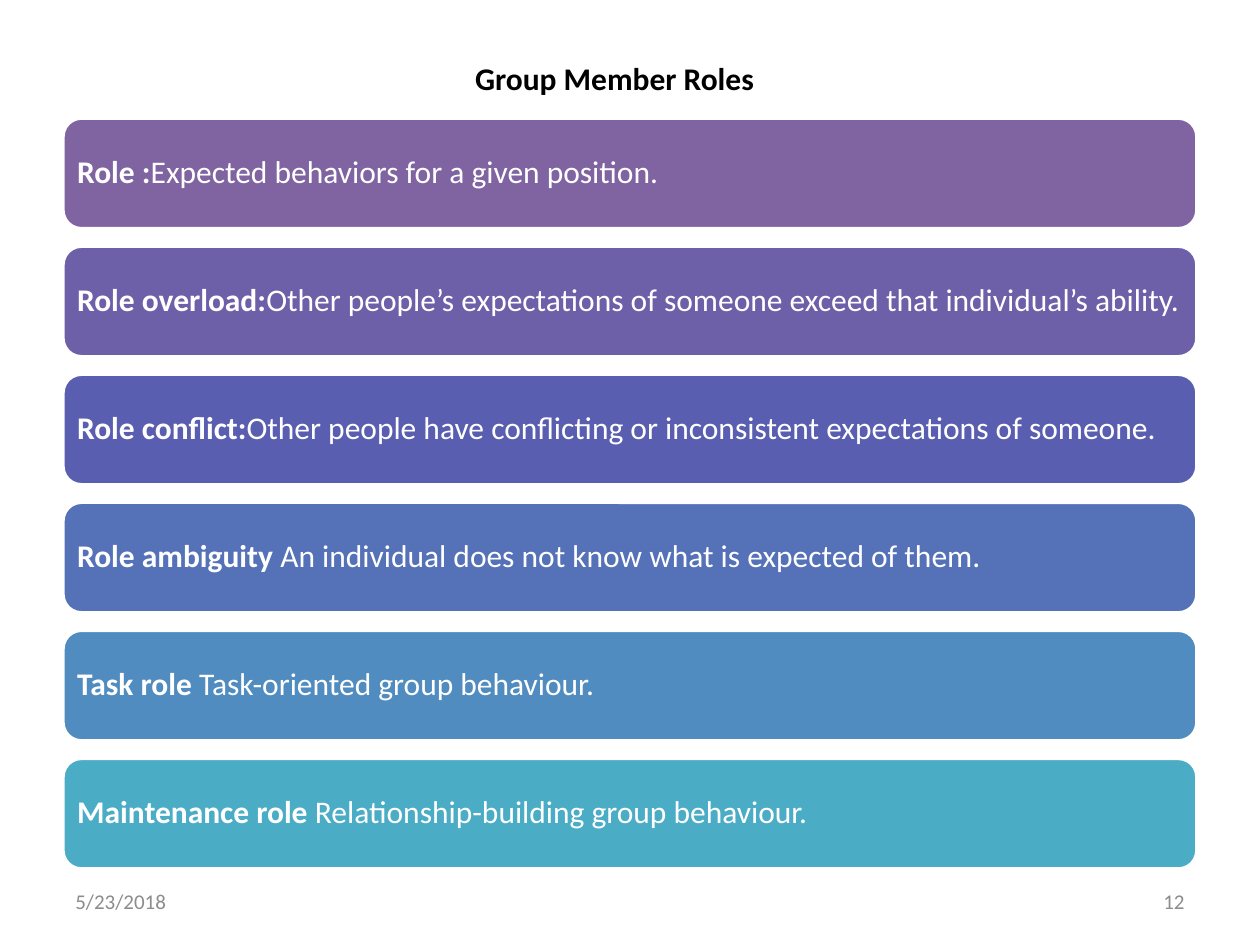
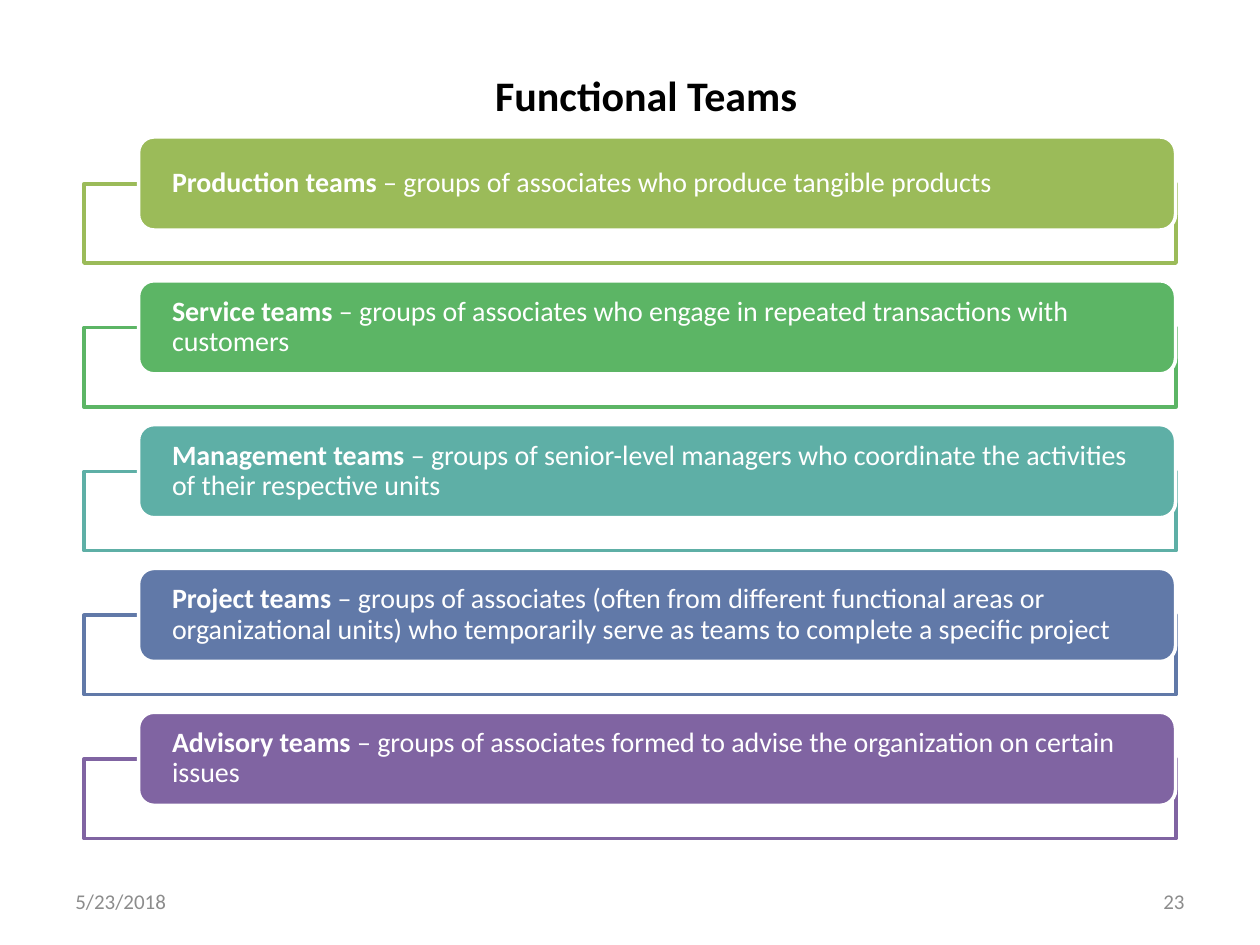
import pptx
import pptx.dml.color
import pptx.enum.shapes
import pptx.enum.text
import pptx.oxml.xmlchemy
import pptx.util
from lxml import etree
from pptx.oxml.ns import qn

RGBColor = pptx.dml.color.RGBColor
Shape = pptx.enum.shapes.MSO_SHAPE
Align = pptx.enum.text.PP_ALIGN
Anchor = pptx.enum.text.MSO_ANCHOR
AutoSize = pptx.enum.text.MSO_AUTO_SIZE
Inches = pptx.util.Inches
Pt = pptx.util.Pt

WHITE = RGBColor(0xFF, 0xFF, 0xFF)
BLACK = RGBColor(0x00, 0x00, 0x00)
GREY = RGBColor(0x8C, 0x8C, 0x8C)
PURPLE = RGBColor(0x80, 0x64, 0xA2)
VIOLET = RGBColor(0x6E, 0x5F, 0xA9)
INDIGO = RGBColor(0x5A, 0x5E, 0xB1)
BLUE = RGBColor(0x55, 0x72, 0xB8)
SKY = RGBColor(0x50, 0x8C, 0xBF)
AQUA = RGBColor(0x4B, 0xAC, 0xC6)
OLIVE = RGBColor(0x9B, 0xBB, 0x59)
GREEN = RGBColor(0x5C, 0xB5, 0x65)
TEAL = RGBColor(0x5E, 0xAF, 0xA6)
SLATE = RGBColor(0x61, 0x79, 0xA8)

FONT = "Calibri"
DATE = "5/23/2018"
TITLE_ONLY = 5

ROLES = [
    (PURPLE, "Role :", "Expected behaviors for a given position."),
    (VIOLET, "Role overload:",
     "Other people’s expectations of someone exceed that individual’s ability."),
    (INDIGO, "Role conflict:",
     "Other people have conflicting or inconsistent expectations of someone."),
    (BLUE, "Role ambiguity ", "An individual does not know what is expected of them."),
    (SKY, "Task role ", "Task-oriented group behaviour."),
    (AQUA, "Maintenance role ", "Relationship-building group behaviour."),
]

TEAMS = [
    (OLIVE, "Production teams", " – groups of associates who produce tangible products"),
    (GREEN, "Service teams",
     " – groups of associates who engage in repeated transactions with customers"),
    (TEAL, "Management teams",
     " – groups of senior-level managers who coordinate the activities "
     "of their respective units"),
    (SLATE, "Project teams",
     " – groups of associates (often from different functional areas or "
     "organizational units) who temporarily serve as teams to complete a specific project"),
    (PURPLE, "Advisory teams",
     " – groups of associates formed to advise the organization on certain issues"),
]


class Composer:
    """Draws on the current page; every area is (left, top, width, height) in percent."""

    def __init__(self):
        self.deck = pptx.Presentation()
        self.deck.slide_width = Inches(10)
        self.deck.slide_height = Inches(7.5)
        self.page = None

    def area(self, left, top, width, height):
        across = self.deck.slide_width / 100
        down = self.deck.slide_height / 100
        return (round(left * across), round(top * down),
                round(width * across), round(height * down))

    def style(self, para, size, color, bold=None):
        para.font.name = FONT
        para.font.size = Pt(size)
        para.font.color.rgb = color
        para.font.bold = bold

    def new_page(self, number):
        self.page = self.deck.slides.add_slide(self.deck.slide_layouts[TITLE_ONLY])
        self.footer(DATE, 5, Align.LEFT)
        self.footer(number, 71.67, Align.RIGHT)

    def footer(self, text, left, alignment):
        box = self.page.shapes.add_textbox(*self.area(left, 92.67, 23.33, 5.33))
        box.text_frame.word_wrap = True
        box.text_frame.vertical_anchor = Anchor.MIDDLE
        para = box.text_frame.paragraphs[0]
        para.text = text
        para.alignment = alignment
        self.style(para, 12, GREY)

    def title(self, text, size, area):
        title = self.page.shapes.title
        title.left, title.top, title.width, title.height = self.area(*area)
        frame = title.text_frame
        frame.text = text
        frame.word_wrap = False
        frame.auto_size = AutoSize.SHAPE_TO_FIT_TEXT
        frame.vertical_anchor = Anchor.TOP
        para = frame.paragraphs[0]
        para.alignment = Align.LEFT
        self.style(para, size, BLACK, True)

    def block(self, kind, area, fill, line):
        block = self.page.shapes.add_shape(kind, *self.area(*area))
        block.shadow.inherit = False
        block.fill.solid()
        block.fill.fore_color.rgb = fill
        block.line.color.rgb = line
        block.line.width = Pt(2)
        return block

    def frame(self, area, color):
        """Outlined rectangle with a slightly see-through white fill."""
        frame = self.block(Shape.RECTANGLE, area, WHITE, color)
        paint = frame._element.spPr.find(qn("a:solidFill")).find(qn("a:srgbClr"))
        etree.SubElement(paint, qn("a:alpha"), val="90000")

    def bar(self, area, color, term, meaning, size, insets):
        """Rounded bar holding a bold term and its meaning."""
        bar = self.block(Shape.ROUNDED_RECTANGLE, area, color, WHITE)
        frame = bar.text_frame
        frame.word_wrap = True
        frame.vertical_anchor = Anchor.MIDDLE
        side, end = insets
        frame.margin_left = frame.margin_right = Inches(side)
        frame.margin_top = frame.margin_bottom = Inches(end)
        para = frame.paragraphs[0]
        para.alignment = Align.LEFT
        para.line_spacing = 0.9
        self.style(para, size, WHITE)
        for text, bold in ((term, True), (meaning, False)):
            span = para.add_run()
            span.text = text
            span.font.bold = bold


def build_roles(composer):
    composer.new_page("12")
    composer.title("Group Member Roles", 18, (36.7, 5.6, 24.3, 5.33))
    for row, (color, term, meaning) in enumerate(ROLES):
        composer.bar((5, 12.5 + 13.55 * row, 90, 11.7),
                     color, term, meaning, 18, (0.07, 0.07))


def build_teams(composer):
    composer.new_page("23")
    composer.title("Functional Teams", 24, (38.3, 6.67, 26.3, 6.67))
    for row, (color, term, meaning) in enumerate(TEAMS):
        top = 14.5 + 15.22 * row
        composer.frame((6.67, top + 4.95, 86.67, 8.4), color)
        composer.bar((11, top, 82.3, 9.85), color, term, meaning, 16, (0.23, 0))


def main():
    composer = Composer()
    build_roles(composer)
    build_teams(composer)
    composer.deck.save("out.pptx")


if __name__ == "__main__":
    main()
